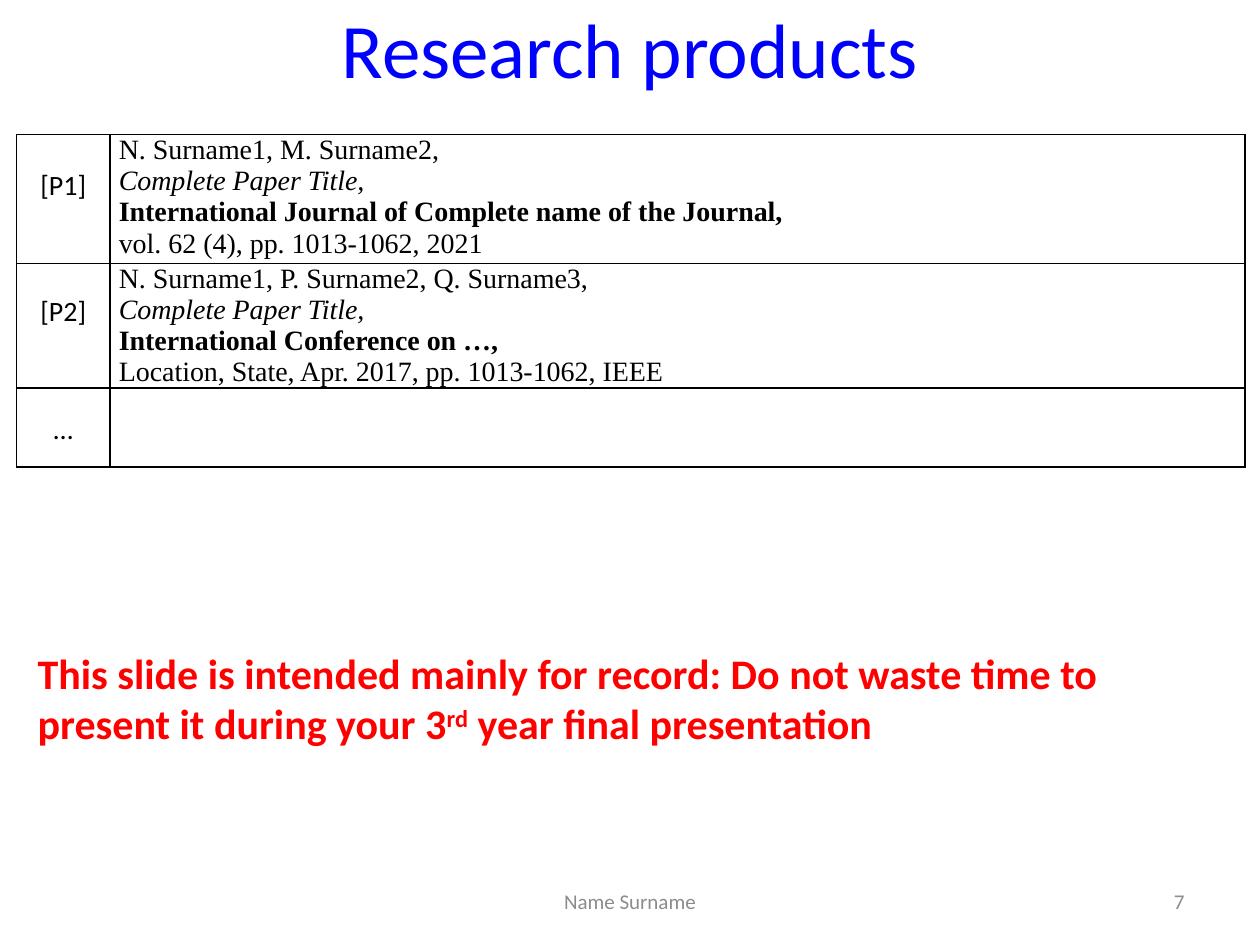
"""Build the research products slide with its publication table."""
from dataclasses import dataclass

from lxml.etree import SubElement
from pptx import Presentation
from pptx.dml.color import RGBColor
from pptx.enum.text import MSO_ANCHOR as Anchor, PP_ALIGN as Align
from pptx.oxml.ns import qn
from pptx.util import Pt

BLUE = RGBColor(0x00, 0x00, 0xFF)
GRAY = RGBColor(0x8C, 0x8C, 0x8C)
RED = RGBColor(0xFF, 0x00, 0x00)
BLACK = RGBColor(0x00, 0x00, 0x00)
SANS, SERIF = "Calibri", "Times New Roman"
COLUMN_WIDTHS = (53.5, 648.5)


@dataclass(frozen=True)
class Label:
    runs: tuple[str, ...]
    left: float
    top: float
    width: float
    height: float
    size: float
    color: RGBColor
    align: Align = Align.CENTER
    anchor: Anchor = Anchor.MIDDLE
    bold: bool = False
    raised: int | None = None


@dataclass(frozen=True)
class Product:
    tag: str
    height: float
    citation: tuple[str, ...] = ()
    bottom_margin: float = 0


LABELS = (
    Label(("Research products",), 36, -18, 648, 90, 44, BLUE),
    Label(("7",), 516, 500.5, 168, 28.75, 12, GRAY, Align.RIGHT),
    Label(("Name Surname",), 246, 500.5, 228, 28.75, 12, GRAY),
    Label(("This slide is intended mainly for record: Do not waste time to "
           "present it during your 3", "rd", " year final presentation"),
          14.4, 366.5, 674.6, 94.3, 24, RED, Align.LEFT, Anchor.TOP, True, 1),
)
PRODUCTS = (
    Product("[P1]", 73.5, (
        "N. Surname1, M. Surname2,",
        "Complete Paper Title,",
        "International Journal of Complete name of the Journal,",
        "vol. 62 (4), pp. 1013-1062, 2021"), 18),
    Product("[P2]", 62.6, (
        "N. Surname1, P. Surname2, Q. Surname3,",
        "Complete Paper Title,",
        "International Conference on …,",
        "Location, State, Apr. 2017, pp. 1013-1062, IEEE"), 18),
    Product("…", 45.4),
)


def set_font(paragraph, name: str, size: float, color: RGBColor) -> None:
    font = paragraph.font
    font.name, font.size = name, Pt(size)
    font.color.rgb = color


def add_label(slide, label: Label) -> None:
    shape = slide.shapes.add_textbox(
        Pt(label.left), Pt(label.top), Pt(label.width), Pt(label.height))
    frame = shape.text_frame
    frame.word_wrap = True
    frame.vertical_anchor = label.anchor
    paragraph = frame.paragraphs[0]
    paragraph.alignment = label.align
    set_font(paragraph, SANS, label.size, label.color)
    paragraph.font.bold = label.bold
    for index, text in enumerate(label.runs):
        run = paragraph.add_run()
        run.text = text
        if index == label.raised:
            run.font._element.set("baseline", "30000")


def style_cell(cell, bottom_margin: float = 0) -> None:
    cell.margin_left = cell.margin_right = Pt(5)
    cell.margin_top, cell.margin_bottom = Pt(0), Pt(bottom_margin)
    properties = cell._tc.get_or_add_tcPr()
    for side in ("lnL", "lnR", "lnT", "lnB"):
        line = SubElement(properties, qn(f"a:{side}"), w=str(Pt(1)))
        fill = SubElement(line, qn("a:solidFill"))
        SubElement(fill, qn("a:srgbClr"), val=str(BLACK))
    cell.fill.background()


def fill_tag(cell, product: Product) -> None:
    style_cell(cell, product.bottom_margin)
    cell.vertical_anchor = Anchor.MIDDLE
    cell.text = product.tag
    paragraph = cell.text_frame.paragraphs[0]
    paragraph.alignment, paragraph.line_spacing = Align.CENTER, 1.15
    set_font(paragraph, SANS, 16, BLACK)


def fill_citation(cell, citation: tuple[str, ...]) -> None:
    style_cell(cell)
    cell.text = "\n".join(citation)
    for index, paragraph in enumerate(cell.text_frame.paragraphs):
        paragraph.alignment = Align.JUSTIFY
        set_font(paragraph, SERIF, 16, BLACK)
        paragraph.font.italic = index == 1
        paragraph.font.bold = index == 2


def add_products(slide, products: tuple[Product, ...]) -> None:
    shape = slide.shapes.add_table(
        len(products), len(COLUMN_WIDTHS), Pt(9.4), Pt(77),
        Pt(sum(COLUMN_WIDTHS)), Pt(sum(product.height for product in products)))
    table = shape.table
    table.first_row = table.horz_banding = False
    for column, width in zip(table.columns, COLUMN_WIDTHS):
        column.width = Pt(width)
    for row, product in zip(table.rows, products):
        row.height = Pt(product.height)
        tag_cell, citation_cell = row.cells
        fill_tag(tag_cell, product)
        fill_citation(citation_cell, product.citation)


def main() -> None:
    presentation = Presentation()
    presentation.slide_width, presentation.slide_height = Pt(720), Pt(540)
    slide = presentation.slides.add_slide(presentation.slide_layouts[6])
    add_products(slide, PRODUCTS)
    for label in LABELS:
        add_label(slide, label)
    presentation.save("out.pptx")


if __name__ == "__main__":
    main()
